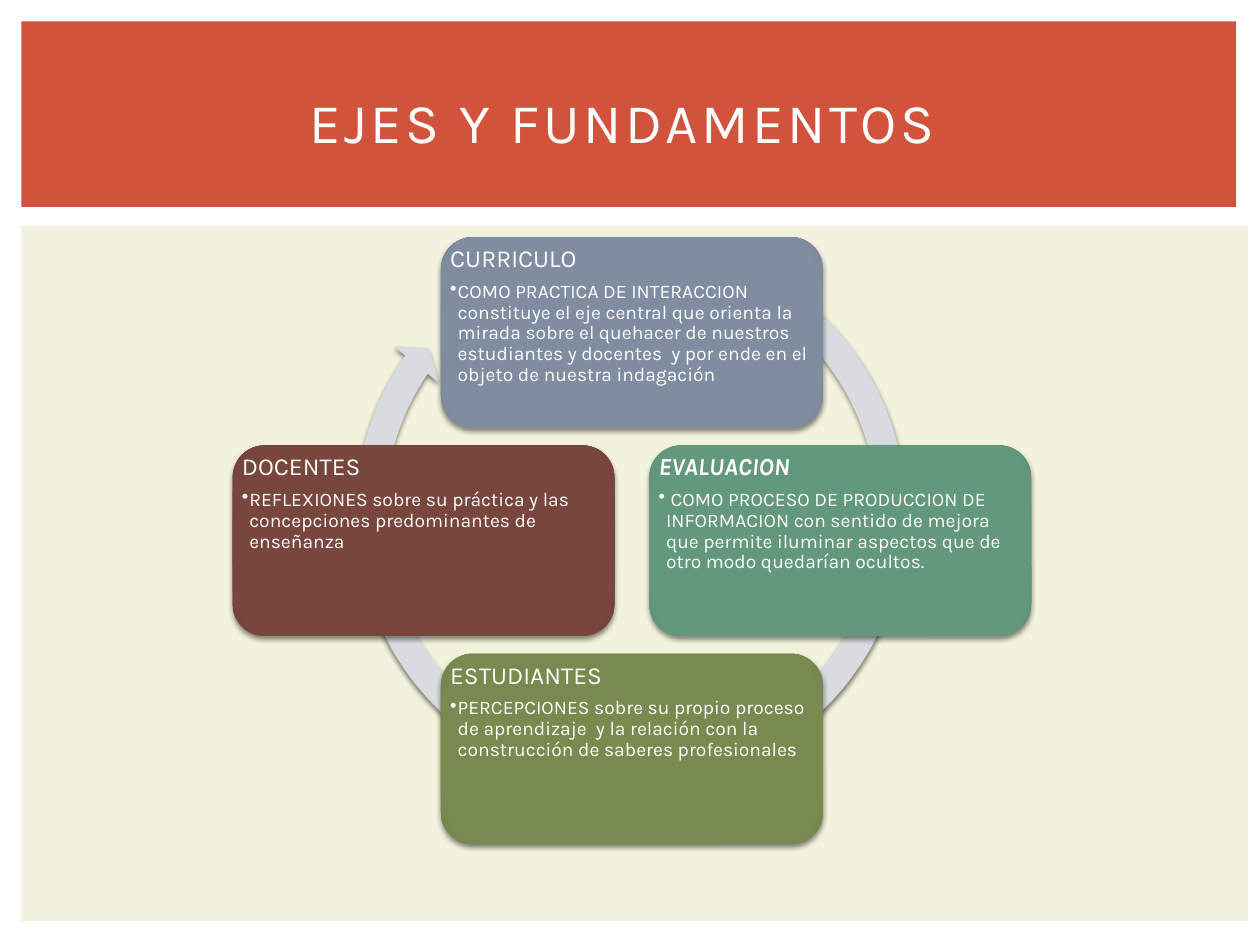
from pptx import Presentation
from pptx.dml.color import RGBColor
from pptx.enum.shapes import MSO_SHAPE as SHAPE
from pptx.enum.text import MSO_ANCHOR as ANCHOR, PP_ALIGN as ALIGN
from pptx.oxml import parse_xml
from pptx.oxml.ns import nsdecls, qn
from pptx.util import Cm, Pt

FONT = "Karla"
WHITE = "FFFFFF"


def add_filled(kind, box, color, shadow=None):
    """Add a shape without outline; shadow is (opacity %, blur pt, distance pt)."""
    sp = s.shapes.add_shape(kind, *[Cm(v) for v in box])
    sp.fill.solid()
    sp.fill.fore_color.rgb = RGBColor.from_string(color)
    sp.line.fill.background()
    sp.shadow.inherit = False
    if shadow:
        alpha, blur, dist = shadow
        sp.element.spPr.find(qn("a:effectLst")).append(parse_xml(
            f'<a:outerShdw {nsdecls("a")} blurRad="{Pt(blur)}" dist="{Pt(dist)}" '
            f'dir="5400000" rotWithShape="0"><a:srgbClr val="000000">'
            f'<a:alpha val="{alpha * 1000}"/></a:srgbClr></a:outerShdw>'))
    return sp


def add_run(p, text, **font):
    r = p.add_run()
    r.text = text
    r.font.color.rgb = RGBColor.from_string(WHITE)
    for name, value in {"name": FONT, **font}.items():
        setattr(r.font, name, value)
    return r


prs = Presentation()
prs.slide_width, prs.slide_height = Cm(25.4), Cm(19.05)
s = prs.slides.add_slide(prs.slide_layouts[5])

# Background panels
add_filled(SHAPE.RECTANGLE, (0.43, 4.55, 24.73, 14.02), "F3F2DC")
add_filled(SHAPE.RECTANGLE, (0.43, 0.43, 24.49, 3.74), "D2533C")

# Cycle arrow behind the cards
arrow = add_filled(SHAPE.CIRCULAR_ARROW, (6.88, 4.5, 11.68, 11.68), "D8DBDF", (50, 2.5, 2))
for i, value in enumerate((0.05, 2.73, 128.8, 179.98, 0.05)):
    arrow.adjustments[i] = value

# Cards sit one step away from the centre: column, row, fill, edge, heading, body
CENTER_X, CENTER_Y, STEP = 12.74, 10.9, 4.2
CARD_W, CARD_H = 7.7, 3.84
cards = [
    (0, -1, "808DA0", "778395", "CURRICULO",
     "COMO PRACTICA DE INTERACCION constituye el eje central que orienta la mirada sobre "
     "el quehacer de nuestros estudiantes y docentes  y por ende en el objeto de nuestra "
     "indagación"),
    (1, 0, "64987C", "5D8E73", "EVALUACION",
     " COMO PROCESO DE PRODUCCION DE INFORMACION con sentido de mejora que permite "
     "iluminar aspectos que de otro modo quedarían ocultos."),
    (0, 1, "788A50", "70804A", "ESTUDIANTES",
     "PERCEPCIONES sobre su propio proceso de aprendizaje  y la relación con la "
     "construcción de saberes profesionales"),
    (-1, 0, "79463D", "714139", "DOCENTES",
     "REFLEXIONES sobre su práctica y las concepciones predominantes de enseñanza"),
]
for col, row, fill, edge, heading, body in cards:
    left = CENTER_X + col * STEP - CARD_W / 2
    top = CENTER_Y + row * STEP - CARD_H / 2
    card = add_filled(SHAPE.ROUNDED_RECTANGLE, (left, top, CARD_W, CARD_H), fill, (45, 3, 2))
    stops = "".join(f'<a:gs pos="{pos}000"><a:srgbClr val="{color}"/></a:gs>'
                    for pos, color in ((0, fill), (90, fill), (100, edge)))
    spPr = card.element.spPr
    spPr.replace(spPr.find(qn("a:solidFill")), parse_xml(
        f'<a:gradFill {nsdecls("a")} rotWithShape="1"><a:gsLst>{stops}</a:gsLst>'
        '<a:path path="circle"><a:fillToRect l="100000" t="100000" r="100000" b="100000"/>'
        '</a:path></a:gradFill>'))

    tf = card.text_frame
    tf.word_wrap = True
    tf.vertical_anchor = ANCHOR.TOP
    tf.margin_left = tf.margin_top = tf.margin_right = tf.margin_bottom = 0
    emphasis = heading == "EVALUACION"
    p = tf.paragraphs[0]
    add_run(p, heading, size=Pt(14), bold=emphasis, italic=emphasis)
    bullet = tf.add_paragraph()
    add_run(bullet, body, size=Pt(11))
    for para, gap in ((p, 5), (bullet, 2)):
        para.alignment = ALIGN.LEFT
        para.line_spacing = 0.9
        para.space_after = Pt(gap)
    bullet.level = 1
    pPr = bullet.element.get_or_add_pPr() if hasattr(bullet, "element") else bullet._p.get_or_add_pPr()
    pPr.set("marL", str(Cm(0.15)))
    pPr.set("indent", str(Cm(-0.15)))
    pPr.append(parse_xml(f'<a:buChar {nsdecls("a")} char="•"/>'))

# Title, brought in front of the panels
title = s.shapes.title
title.left, title.top, title.width, title.height = Cm(1.07), Cm(0.99), Cm(23.29), Cm(2.92)
title.text_frame.vertical_anchor = ANCHOR.MIDDLE
p = title.text_frame.paragraphs[0]
p.alignment = ALIGN.CENTER
r = add_run(p, "EJES Y FUNDAMENTOS ", size=Pt(32))
r.font._element.set("spc", "200")
title.element.getparent().append(title.element)

prs.save("out.pptx")
